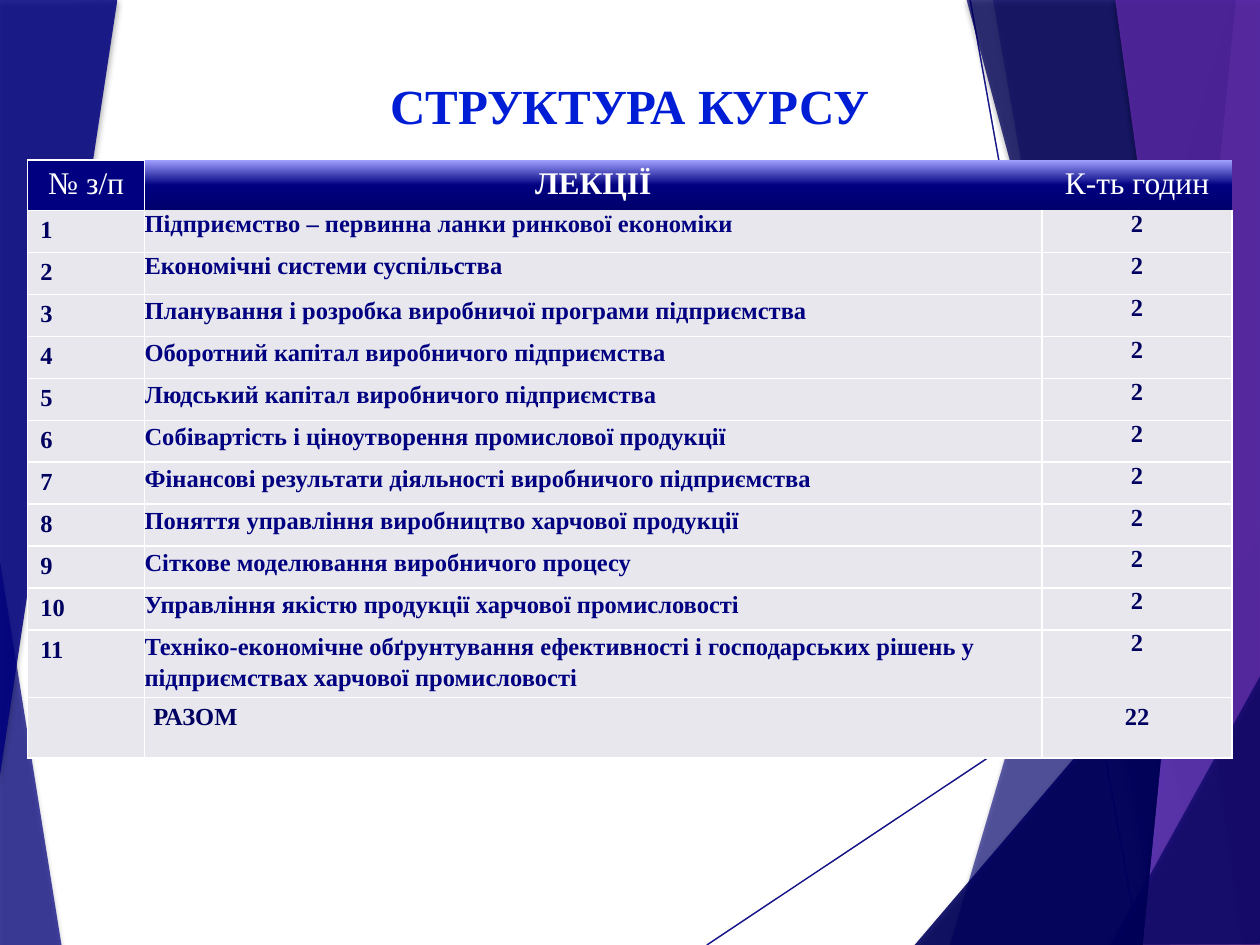
from dataclasses import dataclass

import lxml.etree
import pptx
import pptx.dml.color
import pptx.enum.shapes
import pptx.enum.text
import pptx.oxml.ns
import pptx.util

ALIGN = pptx.enum.text.PP_ALIGN
ANCHOR = pptx.enum.text.MSO_ANCHOR


@dataclass(frozen=True)
class Theme:
    font: str = "Times New Roman"
    title: str = "001DD6"
    navy: str = "000080"
    dark: str = "000060"
    violet: str = "7B46D0"
    purple: str = "5A2AA6"
    white: str = "FFFFFF"
    cell: str = "E7E7ED"
    header_stops: tuple = ((0, "A0A0FF"), (50, "000080"), (100, "00006D"))
    title_size: int = 28
    header_size: int = 18
    body_size: int = 14
    border: float = 0.96
    ray: float = 0.75


THEME = Theme()

# Points in thousandths of the slide width: outline, colour, opacity
LEFT_LOW = ([(-1, 439), (49, 751), (-1, 750)], THEME.navy, 70)
LEFT_HIGH = ([(-1, 0), (93, -1), (93, 1), (-1, 622)], THEME.navy, 85)
RIGHT_FACETS = [
    ([(975, 0), (754, 750), (1001, 751), (1001, 1)], THEME.navy, 36),
    ([(788, -1), (919, 750), (1001, 750), (1001, -1)], THEME.navy, 20),
    ([(726, 750), (1000, 429), (1000, 750)], THEME.dark, 66),
    ([(767, -1), (969, 750), (1001, 749), (1001, -1)], THEME.dark, 50),
    ([(981, -1), (907, 750), (1001, 750), (1000, -1)], THEME.violet, 70),
    ([(885, -1), (988, 750), (1001, 750), (1000, -1)], THEME.purple, 82),
    ([(882, 750), (1001, 535), (1002, 749)], THEME.dark, 66),
]
RAYS = [(561, 750, 1001, 457), (770, 0, 904, 750)]

HEADERS = ["№ з/п", "ЛЕКЦІЇ", "К-ть годин"]
LECTURES = [
    "Підприємство – первинна ланки ринкової економіки",
    "Економічні системи суспільства",
    "Планування і розробка виробничої програми підприємства",
    "Оборотний капітал виробничого підприємства",
    "Людський капітал виробничого підприємства",
    "Собівартість і ціноутворення промислової продукції",
    "Фінансові результати діяльності виробничого підприємства",
    "Поняття управління виробництво харчової продукції",
    "Сіткове моделювання виробничого процесу",
    "Управління якістю продукції харчової промисловості",
    "Техніко-економічне обґрунтування ефективності і господарських рішень "
    "у підприємствах харчової промисловості",
]
HOURS = 2


def rgb(value):
    return pptx.dml.color.RGBColor.from_string(value)


def add_xml(parent, tag, **attrs):
    child = lxml.etree.SubElement(parent, pptx.oxml.ns.qn(tag))
    for name, value in attrs.items():
        child.set(name, str(value))
    return child


def set_opacity(part, percent):
    color = next(part.iter(pptx.oxml.ns.qn("a:srgbClr")))
    add_xml(color, "a:alpha", val=percent * 1000)


def add_facet(s, unit, points, color, opacity):
    builder = s.shapes.build_freeform(*points[0], scale=unit)
    builder.add_line_segments(points[1:], close=True)
    sp = builder.convert_to_shape()
    sp.fill.solid()
    sp.fill.fore_color.rgb = rgb(color)
    sp.line.fill.background()
    props = sp._element.spPr
    set_opacity(props, opacity)
    # Soft shadow below the facet
    sp.shadow.inherit = False
    effects = props.find(pptx.oxml.ns.qn("a:effectLst"))
    shadow = add_xml(effects, "a:outerShdw", blurRad=pptx.util.Pt(3),
                     dist=pptx.util.Pt(2), dir=90 * 60000, rotWithShape=0)
    add_xml(add_xml(shadow, "a:srgbClr", val="000000"), "a:alpha", val=35000)


def add_ray(s, unit, ends):
    ray = s.shapes.add_connector(pptx.enum.shapes.MSO_CONNECTOR.STRAIGHT,
                                 *(int(unit * v) for v in ends))
    ray.line.color.rgb = rgb(THEME.navy)
    ray.line.width = pptx.util.Pt(THEME.ray)
    set_opacity(ray._element.spPr, 70)
    add_xml(ray._element.spPr, "a:effectLst")


def add_backdrop(s, width):
    unit = width / 1000
    add_facet(s, unit, *LEFT_LOW)
    # Two translucent layers deepen the right-hand colours
    for _ in range(2):
        for ends in RAYS:
            add_ray(s, unit, ends)
        for facet in RIGHT_FACETS:
            add_facet(s, unit, *facet)
    add_facet(s, unit, *LEFT_HIGH)


def format_text(tf, size, color, bold, align):
    p = tf.paragraphs[0]
    p.alignment = align
    for r in p.runs:
        r.font.name = THEME.font
        r.font.size = pptx.util.Pt(size)
        r.font.bold = bold
        r.font.color.rgb = rgb(color)
    return p


def add_title(s, box):
    title = s.shapes.title
    title.left, title.top, title.width, title.height = box
    s.shapes._spTree.append(title._element)  # in front of the backdrop
    tf = title.text_frame
    tf.text = "СТРУКТУРА КУРСУ"
    tf.word_wrap = True
    tf.auto_size = pptx.enum.text.MSO_AUTO_SIZE.NONE
    tf.vertical_anchor = ANCHOR.BOTTOM
    format_text(tf, THEME.title_size, THEME.title, True, ALIGN.CENTER)


def set_borders(cell, shown):
    props = cell._tc.get_or_add_tcPr()
    for side in "LRTB":
        ln = add_xml(props, f"a:ln{side}", w=pptx.util.Pt(THEME.border))
        if side in shown:
            add_xml(add_xml(ln, "a:solidFill"), "a:srgbClr", val=THEME.white)
        else:
            add_xml(ln, "a:noFill")


def fill_header(cell):
    grad = add_xml(cell._tc.get_or_add_tcPr(), "a:gradFill", rotWithShape=1)
    stops = add_xml(grad, "a:gsLst")
    for pos, color in THEME.header_stops:
        add_xml(add_xml(stops, "a:gs", pos=pos * 1000), "a:srgbClr", val=color)
    add_xml(grad, "a:lin", ang=90 * 60000, scaled=0)


def set_cell(cell, row, col, text, last):
    # Borders: the gradient header is seamless
    shown = {(0, 1): "L", (0, 2): "", (1, 1): "LRB", (1, 2): "LRB"}
    set_borders(cell, shown.get((row, col), "LRTB"))
    if row == 0 and col > 0:
        fill_header(cell)
    else:
        cell.fill.solid()
        cell.fill.fore_color.rgb = rgb(THEME.cell if row else THEME.navy)
    cell.vertical_anchor = ANCHOR.TOP
    cell.text = text
    # Text
    if row == 0:
        format_text(cell.text_frame, THEME.header_size, THEME.white, col == 1, ALIGN.CENTER)
        return
    lecture = col == 1 and row < last
    p = format_text(cell.text_frame, THEME.body_size, THEME.navy if lecture else THEME.dark,
                    True, ALIGN.CENTER if col == 2 else ALIGN.LEFT)
    if lecture and row > 2:
        p.line_spacing = 1.14
    # Margins
    if col > 0:
        side, end = (0.07, 0.05) if row == last else (0, 0)
        cell.margin_left = cell.margin_right = pptx.util.Inches(side)
        cell.margin_top = cell.margin_bottom = pptx.util.Inches(end)


def add_course_table(s, box):
    lectures = [[str(n), name, str(HOURS)] for n, name in enumerate(LECTURES, 1)]
    rows = [HEADERS, *lectures, ["", "РАЗОМ", str(HOURS * len(LECTURES))]]
    table = s.shapes.add_table(len(rows), len(HEADERS), *box).table
    table.horz_banding = False
    for column, share in zip(table.columns, (0.097, 0.745, 0.158)):
        column.width = int(box[2] * share)
    # Row heights in units of one single-line lecture row
    units = [1.2] + [1] * (len(LECTURES) - 1) + [1.6, 1.45]
    for r, (row, values) in enumerate(zip(table.rows, rows)):
        row.height = int(box[3] * units[r] / sum(units))
        for c, text in enumerate(values):
            set_cell(table.cell(r, c), r, c, text, len(rows) - 1)


def main():
    prs = pptx.Presentation()
    prs.slide_width, prs.slide_height = pptx.util.Inches(10), pptx.util.Inches(7.5)
    s = prs.slides.add_slide(prs.slide_layouts[5])
    inches = pptx.util.Inches
    add_backdrop(s, prs.slide_width)
    add_title(s, [inches(v) for v in (2.5, 0.55, 5, 0.57)])
    add_course_table(s, [inches(v) for v in (0.22, 1.27, 9.56, 4.75)])
    prs.save("out.pptx")


if __name__ == "__main__":
    main()
